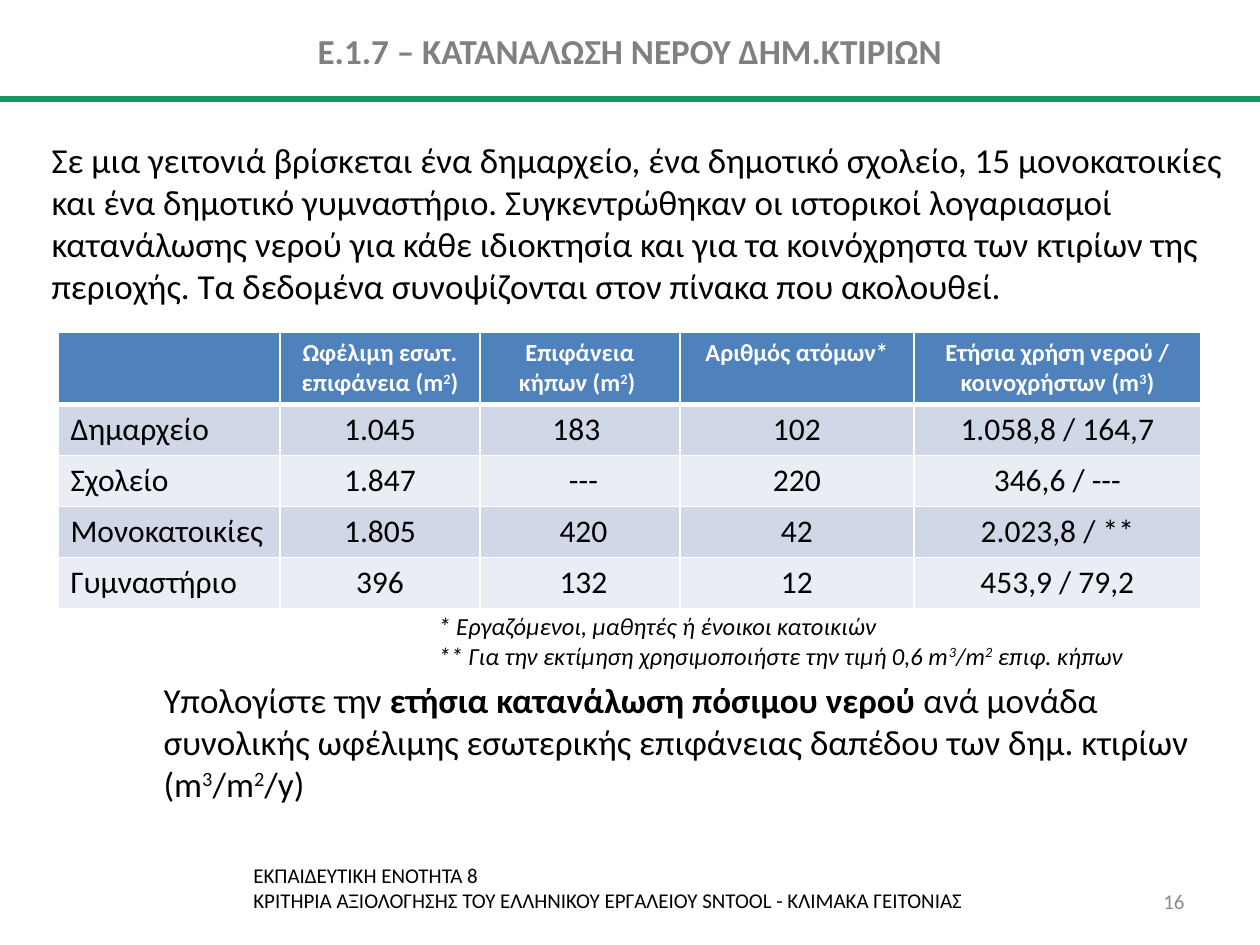
from dataclasses import dataclass

from lxml import etree
from pptx import Presentation
from pptx.dml.color import RGBColor
from pptx.enum import shapes, text
from pptx.oxml import ns
from pptx.util import Emu, Pt

PX = 914400 / 126


@dataclass(frozen=True)
class Theme:
    font: str = "Calibri"
    black: str = "000000"
    white: str = "FFFFFF"
    title_grey: str = "808080"
    number_grey: str = "8C8C8C"
    rule_green: str = "159961"
    header_blue: str = "4F81BD"
    bands: tuple = ("D0D8E8", "E9EDF4")
    body_size: int = 20
    cell_size: int = 18
    note_size: int = 14
    footer_size: int = 12


THEME = Theme()
ALIGN = text.PP_ALIGN
ANCHOR = text.MSO_ANCHOR

TITLE = "Ε.1.7 – ΚΑΤΑΝΑΛΩΣΗ ΝΕΡΟΥ ΔΗΜ.ΚΤΙΡΙΩΝ"
INTRO = (
    "Σε μια γειτονιά βρίσκεται ένα δημαρχείο, ένα δημοτικό σχολείο, 15 μονοκατοικίες "
    "και ένα δημοτικό γυμναστήριο. Συγκεντρώθηκαν οι ιστορικοί λογαριασμοί κατανάλωσης "
    "νερού για κάθε ιδιοκτησία και για τα κοινόχρηστα των κτιρίων της περιοχής. "
    "Τα δεδομένα συνοψίζονται στον πίνακα που ακολουθεί."
)
TASK = (
    "Υπολογίστε την |ετήσια κατανάλωση πόσιμου νερού |ανά μονάδα συνολικής ωφέλιμης "
    "εσωτερικής επιφάνειας δαπέδου των δημ. κτιρίων (m^3/m^2/y)"
)
NOTES = [
    "* Εργαζόμενοι, μαθητές ή ένοικοι κατοικιών",
    "** Για την εκτίμηση χρησιμοποιήστε την τιμή 0,6 m^3/m^2 επιφ. κήπων",
]
FOOTER = (
    "ΕΚΠΑΙΔΕΥΤΙΚΗ ΕΝΟΤΗΤΑ 8\n"
    "ΚΡΙΤΗΡΙΑ ΑΞΙΟΛΟΓΗΣΗΣ ΤΟΥ ΕΛΛΗΝΙΚΟΥ ΕΡΓΑΛΕΙΟΥ SNTOOL - ΚΛΙΜΑΚΑ ΓΕΙΤΟΝΙΑΣ"
)
COLUMN_WIDTHS = [222, 200, 200, 234, 287]
HEADER_HEIGHT, ROW_HEIGHT = 71, 51
WATER_USE = [
    ["", "Ωφέλιμη εσωτ. επιφάνεια (m^2)", "Επιφάνεια κήπων (m^2) ",
     "Αριθμός ατόμων*", "Ετήσια χρήση νερού / κοινοχρήστων (m^3)"],
    ["Δημαρχείο", "1.045", "183 ", "102", "1.058,8 / 164,7"],
    ["Σχολείο", "1.847", " ---", "220", "346,6 / ---"],
    ["Μονοκατοικίες", "1.805", " 420", "42", "2.023,8 / **"],
    ["Γυμναστήριο", "396", " 132", "12", "453,9 / 79,2"],
]


def px(length):
    return Emu(round(length * PX))


def rgb(value):
    return RGBColor.from_string(value)


def add_run(paragraph, content, bold=False, superscript=False):
    if not content:
        return
    run = paragraph.add_run()
    run.text = content
    if bold:
        run.font.bold = True
    if superscript:
        run._r.get_or_add_rPr().set("baseline", "30000")


def write_paragraph(paragraph, content, size, color, align=ALIGN.LEFT,
                    bold=False, italic=False):
    """Write marked text: |bold|, ^ before one raised character, newline for a break."""
    for line_index, line in enumerate(content.split("\n")):
        if line_index:
            paragraph.add_line_break()
        for part_index, part in enumerate(line.split("|")):
            strong = part_index % 2 == 1
            plain, *raised = part.split("^")
            add_run(paragraph, plain, strong)
            for piece in raised:
                add_run(paragraph, piece[:1], strong, superscript=True)
                add_run(paragraph, piece[1:], strong)
    paragraph.alignment = align
    font = paragraph.font
    font.name, font.size, font.color.rgb = THEME.font, Pt(size), rgb(color)
    font.bold, font.italic = bold, italic


def place(shape, box):
    shape.left, shape.top, shape.width, shape.height = map(px, box)


def prepare_frame(shape, anchor):
    frame = shape.text_frame
    frame.word_wrap = True
    frame.auto_size = text.MSO_AUTO_SIZE.NONE
    frame.vertical_anchor = anchor
    return frame


def fill_title(slide, box):
    title = slide.shapes.title
    place(title, box)
    frame = prepare_frame(title, ANCHOR.MIDDLE)
    write_paragraph(frame.paragraphs[0], TITLE, THEME.body_size, THEME.title_grey,
                    ALIGN.CENTER, bold=True)


def fill_body(placeholder, box, content):
    place(placeholder, box)
    paragraph = prepare_frame(placeholder, ANCHOR.TOP).paragraphs[0]
    properties = paragraph._p.get_or_add_pPr()
    properties.set("marL", "0")
    properties.set("indent", "0")
    etree.SubElement(properties, ns.qn("a:buNone"))
    paragraph.space_before = Pt(0)
    paragraph.space_after = Pt(6)
    write_paragraph(paragraph, content, THEME.body_size, THEME.black)


def add_text(slide, box, lines, size, color, anchor=ANCHOR.TOP, **style):
    frame = prepare_frame(slide.shapes.add_textbox(*map(px, box)), anchor)
    for index, line in enumerate(lines):
        paragraph = frame.add_paragraph() if index else frame.paragraphs[0]
        write_paragraph(paragraph, line, size, color, **style)


def add_rule(slide, y, width):
    rule = slide.shapes.add_connector(
        shapes.MSO_CONNECTOR.STRAIGHT, px(0), px(y), px(width), px(y))
    rule.line.color.rgb = rgb(THEME.rule_green)
    rule.line.width = Pt(3)
    etree.SubElement(rule._element.spPr, ns.qn("a:effectLst"))


def add_borders(cell, row):
    """Thin white lines, with a thick one between header and first row."""
    widths = {"L": 1, "R": 1, "T": 3 if row == 1 else 1, "B": 3 if row == 0 else 1}
    properties = cell._tc.get_or_add_tcPr()
    for side, width in widths.items():
        line = etree.SubElement(properties, ns.qn(f"a:ln{side}"), w=str(Pt(width)))
        fill = etree.SubElement(line, ns.qn("a:solidFill"))
        etree.SubElement(fill, ns.qn("a:srgbClr"), val=THEME.white)


def format_cell(cell, row, column, content):
    header = row == 0
    add_borders(cell, row)
    cell.fill.solid()
    cell.fill.fore_color.rgb = rgb(
        THEME.header_blue if header else THEME.bands[(row - 1) % 2])
    cell.vertical_anchor = ANCHOR.TOP if header else ANCHOR.MIDDLE
    write_paragraph(
        cell.text_frame.paragraphs[0], content,
        THEME.note_size if header else THEME.cell_size,
        THEME.white if header else THEME.black,
        ALIGN.CENTER if header or column else ALIGN.LEFT, bold=header)


def add_water_table(slide, left, top):
    heights = [HEADER_HEIGHT] + [ROW_HEIGHT] * (len(WATER_USE) - 1)
    box = (left, top, sum(COLUMN_WIDTHS), sum(heights))
    table = slide.shapes.add_table(
        len(heights), len(COLUMN_WIDTHS), *map(px, box)).table
    for column, width in zip(table.columns, COLUMN_WIDTHS):
        column.width = px(width)
    for row, (height, values) in enumerate(zip(heights, WATER_USE)):
        table.rows[row].height = px(height)
        for column, content in enumerate(values):
            format_cell(table.cell(row, column), row, column, content)


def main():
    presentation = Presentation()
    presentation.slide_width, presentation.slide_height = px(1260), px(945)
    slide = presentation.slides.add_slide(
        presentation.slide_layouts.get_by_name("Two Content"))
    add_rule(slide, 99, 1260)
    fill_title(slide, (0, 0, 1260, 101))
    fill_body(slide.placeholders[1], (39, 132, 1221, 185), INTRO)
    fill_body(slide.placeholders[2], (151, 672, 1082, 141), TASK)
    add_water_table(slide, 58, 332)
    add_text(slide, (426, 605, 770, 72), NOTES, THEME.note_size, THEME.black,
             italic=True)
    add_text(slide, (241, 856, 856, 63), [FOOTER], THEME.footer_size, THEME.black)
    add_text(slide, (903, 876, 294, 50), ["16"], THEME.footer_size,
             THEME.number_grey, ANCHOR.MIDDLE, align=ALIGN.RIGHT)
    presentation.save("out.pptx")


if __name__ == "__main__":
    main()
